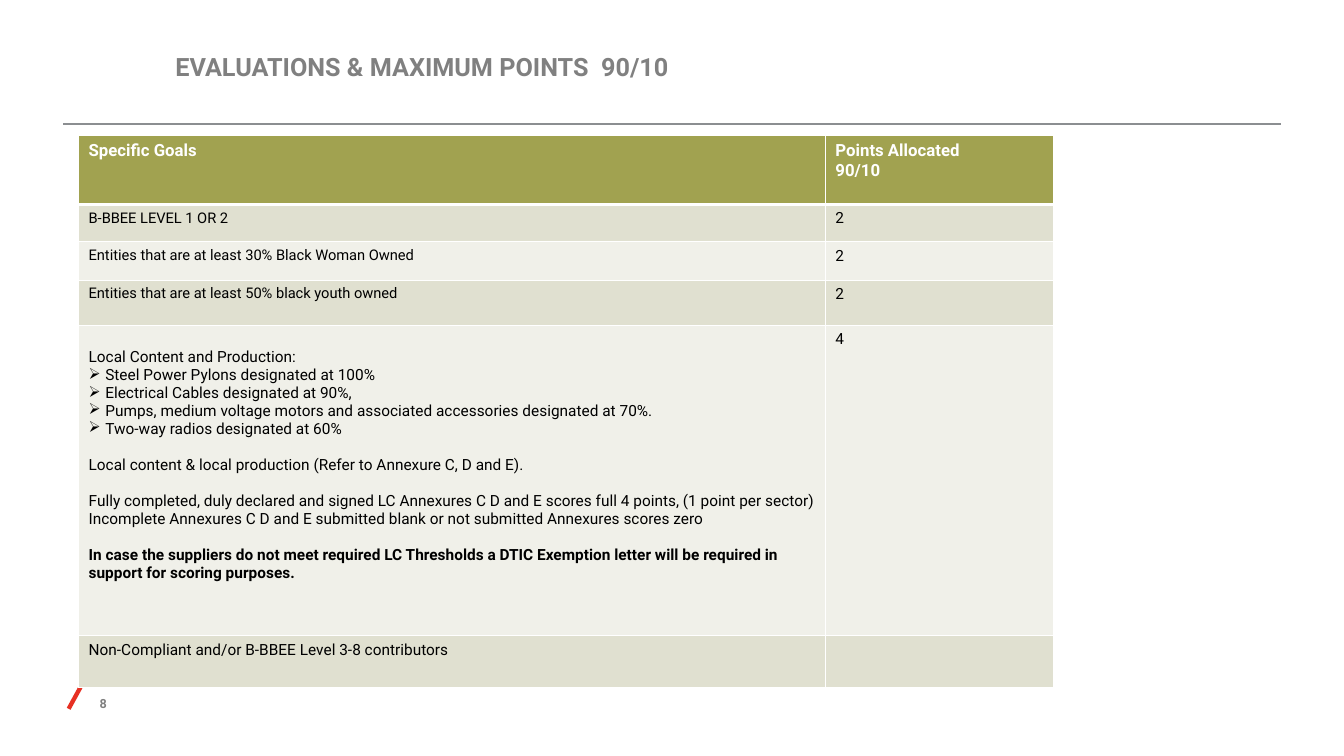
import pptx
import pptx.dml.color
import pptx.enum.shapes
import pptx.enum.text
import pptx.oxml
import pptx.oxml.ns
import pptx.util
from lxml import etree

Cm = pptx.util.Cm
Pt = pptx.util.Pt
RGBColor = pptx.dml.color.RGBColor
Align = pptx.enum.text.PP_ALIGN
Anchor = pptx.enum.text.MSO_ANCHOR

WHITE = RGBColor(0xFF, 0xFF, 0xFF)
BLACK = RGBColor(0x00, 0x00, 0x00)
GREY = RGBColor(0x80, 0x80, 0x80)
RULE_GREY = RGBColor(0x8B, 0x8E, 0x91)
RED = RGBColor(0xE7, 0x30, 0x23)
OLIVE = RGBColor(0xA1, 0xA2, 0x50)
BANDS = (RGBColor(0xE0, 0xE0, 0xD0), RGBColor(0xF0, 0xF0, 0xE9))

COLUMN_WIDTHS = (18.82, 5.74)
ROW_HEIGHTS = (1.73, 0.94, 0.97, 1.14, 7.82, 1.3)
LINE_GAP = Pt(12.9)

# Each paragraph is a text with its options
LOCAL_CONTENT = [
    ("Local Content and Production:", {}),
    ("Steel Power Pylons designated at 100%", {"bullet": True}),
    ("Electrical Cables designated at 90%,", {"bullet": True}),
    ("Pumps, medium voltage motors and associated accessories designated at 70%.",
     {"bullet": True}),
    ("Two-way radios designated at 60%", {"bullet": True}),
    ("Local content & local production (Refer to Annexure C, D and E).", {"gap": True}),
    ("Fully completed, duly declared and signed LC Annexures C D and E scores full "
     "4 points, (1 point per sector)", {"gap": True}),
    ("Incomplete Annexures C D and E submitted blank or not submitted Annexures "
     "scores zero", {}),
    ("In case the suppliers do not meet required LC Thresholds a DTIC Exemption "
     "letter will be required in support for scoring purposes.",
     {"gap": True, "bold": True}),
]

# Goal, size of the goal text, points
GOALS = [
    ([("B-BBEE LEVEL 1 OR 2", {})], 10.5, "2"),
    ([("Entities that are at least 30% Black Woman Owned", {})], 10.5, "2"),
    ([("Entities that are at least 50% black youth owned", {})], 10.5, "2"),
    (LOCAL_CONTENT, 11, "4"),
    ([("Non-Compliant and/or B-BBEE Level 3-8 contributors", {})], 11, ""),
]


class Page:
    """Holds the style and the current slide."""

    font_name = "Roboto"

    def __init__(self, deck):
        self.slide = deck.slides.add_slide(deck.slide_layouts[6])
        self.shapes = self.slide.shapes

    def add_paragraphs(self, frame, paragraphs, size, color, bold=False,
                       align=Align.LEFT):
        for index, (text, options) in enumerate(paragraphs):
            para = frame.paragraphs[0] if index == 0 else frame.add_paragraph()
            para.alignment = align
            if options.get("gap"):
                para.space_before = LINE_GAP
            if options.get("bullet"):
                self.add_bullet(para)
            span = para.add_run()
            span.text = text
            style = {"name": self.font_name, "size": Pt(size),
                     "bold": options.get("bold", bold)}
            for key, value in style.items():
                setattr(span.font, key, value)
            span.font.color.rgb = color

    def add_bullet(self, para):
        properties = para._p.get_or_add_pPr()
        properties.set("marL", str(Cm(0.42)))
        properties.set("indent", str(-Cm(0.42)))
        mark = etree.SubElement(properties, pptx.oxml.ns.qn("a:buChar"))
        mark.set("char", "➢")

    def text(self, left, top, width, height, text, size, anchor,
             align=Align.LEFT, bottom=0):
        box = self.shapes.add_textbox(Cm(left), Cm(top), Cm(width), Cm(height))
        frame = box.text_frame
        settings = {"word_wrap": True, "vertical_anchor": anchor,
                    "margin_left": 0, "margin_right": 0,
                    "margin_top": 0, "margin_bottom": Cm(bottom)}
        for key, value in settings.items():
            setattr(frame, key, value)
        self.add_paragraphs(frame, [(text, {})], size, GREY, bold=True, align=align)

    def line(self, x1, y1, x2, y2, color, width):
        line = self.shapes.add_connector(
            pptx.enum.shapes.MSO_CONNECTOR.STRAIGHT, Cm(x1), Cm(y1), Cm(x2), Cm(y2))
        line.line.color.rgb = color
        line.line.width = Pt(width)
        etree.SubElement(line._element.spPr, pptx.oxml.ns.qn("a:effectLst"))

    def table(self, left, top, widths, heights):
        frame = self.shapes.add_table(len(heights), len(widths), Cm(left), Cm(top),
                                      Cm(sum(widths)), Cm(sum(heights)))
        table = frame.table
        table.horz_banding = False
        for column, width in zip(table.columns, widths):
            column.width = Cm(width)
        for row, height in zip(table.rows, heights):
            row.height = Cm(height)
        return table

    def cell(self, cell, paragraphs, size, fill, color=BLACK, bold=False,
             margin_top=0.13, thick=""):
        # White borders; the sides named in thick are 3 pt
        properties = cell._tc.get_or_add_tcPr()
        for side in "LRTB":
            width = Pt(3 if side in thick else 1)
            properties.append(pptx.oxml.parse_xml(
                f'<a:ln{side} {pptx.oxml.ns.nsdecls("a")} w="{width}"><a:solidFill>'
                f'<a:srgbClr val="{WHITE}"/></a:solidFill></a:ln{side}>'))
        cell.fill.solid()
        cell.fill.fore_color.rgb = fill
        cell.margin_top = Cm(margin_top)
        self.add_paragraphs(cell.text_frame, paragraphs, size, color, bold)


def main():
    deck = pptx.Presentation()
    deck.slide_width, deck.slide_height = Cm(33.87), Cm(19.05)
    page = Page(deck)

    # Footer and rules
    page.text(1.24, 17.48, 1.45, 0.58, "8", 9, Anchor.BOTTOM, Align.RIGHT, bottom=0.13)
    page.line(1.59, 3.12, 32.28, 3.12, RULE_GREY, 1.65)
    page.line(1.73, 17.86, 2.18, 17.04, RED, 3.05)

    # Title
    page.text(4.42, 0.79, 26.04, 1.78, "EVALUATIONS & MAXIMUM POINTS  90/10", 18,
              Anchor.MIDDLE)

    # Table header
    table = page.table(1.98, 3.42, COLUMN_WIDTHS, ROW_HEIGHTS)
    headings = (["Specific Goals"], ["Points Allocated", "90/10"])
    for column, lines in enumerate(headings):
        page.cell(table.cell(0, column), [(line, {}) for line in lines], 12, OLIVE,
                  WHITE, bold=True, thick="B")

    # Goals and their points
    for row, (goal, size, points) in enumerate(GOALS, start=1):
        fill = BANDS[(row - 1) % 2]
        thick = "T" if row == 1 else ""
        margin_top = 0.58 if goal is LOCAL_CONTENT else 0.13
        page.cell(table.cell(row, 0), goal, size, fill, margin_top=margin_top,
                  thick=thick)
        page.cell(table.cell(row, 1), [(points, {})] if points else [], 11, fill,
                  thick=thick)

    deck.save("out.pptx")


if __name__ == "__main__":
    main()
